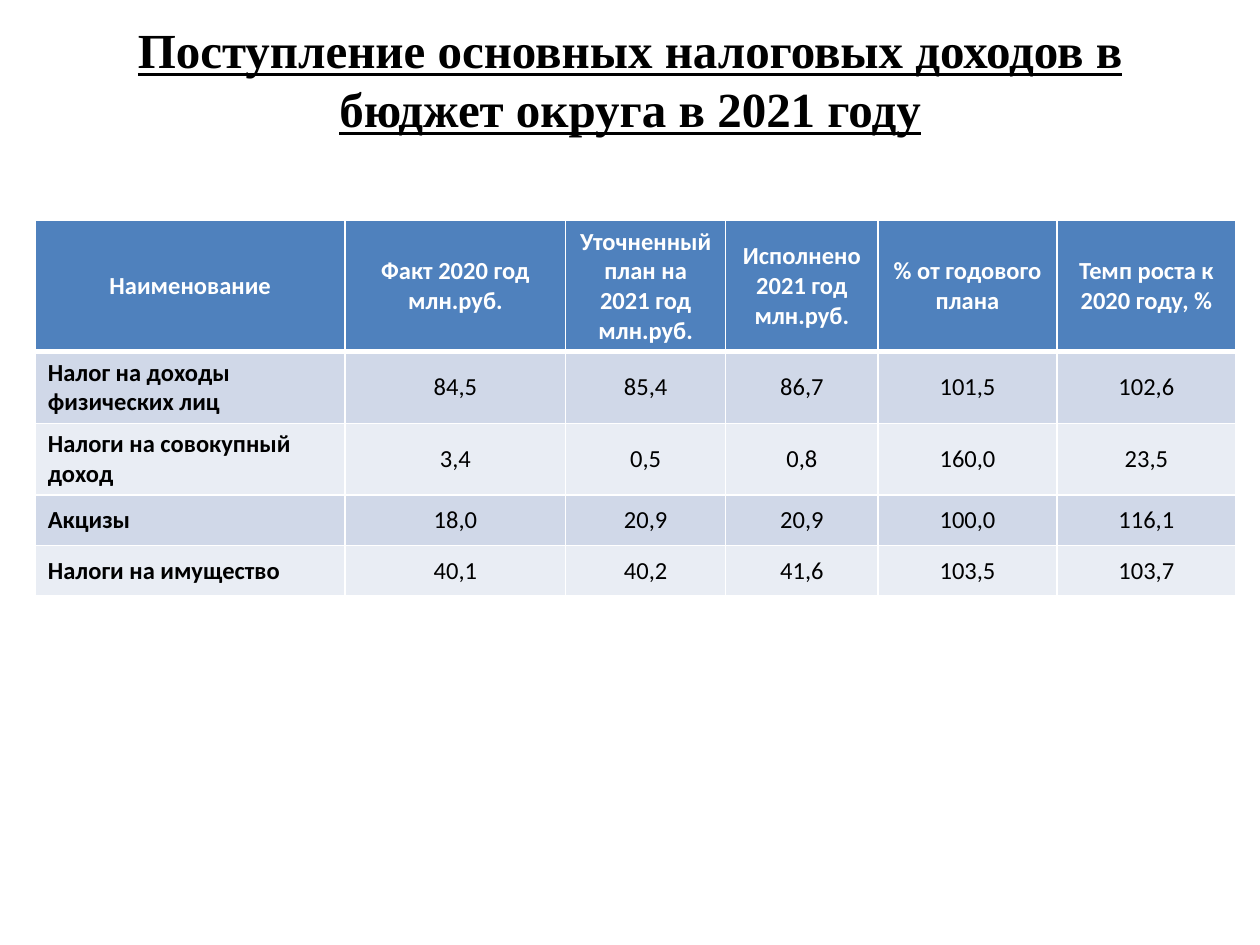
from lxml import etree
from pptx import Presentation
from pptx.dml.color import RGBColor
from pptx.enum.text import MSO_ANCHOR, PP_ALIGN
from pptx.oxml.ns import qn
from pptx.util import Inches, Pt

MIDDLE = MSO_ANCHOR.MIDDLE
LEFT, CENTER = PP_ALIGN.LEFT, PP_ALIGN.CENTER
COLORS = {"head": "4F81BD", "odd": "D0D8E8", "even": "E9EDF4",
          "white": "FFFFFF", "black": "000000"}
WIDTHS = [2.46, 1.75, 1.27, 1.21, 1.42, 1.42]
HEIGHTS = [1.04, 0.57, 0.57, 0.4, 0.4]
ROWS = [
    ["Наименование", "Факт 2020 год млн.руб.", "Уточненный план на 2021 год млн.руб.",
     "Исполнено 2021 год млн.руб.", "% от годового плана", "Темп роста к 2020 году, %"],
    ["Налог на доходы физических лиц", "84,5", "85,4", "86,7", "101,5", "102,6"],
    ["Налоги на совокупный доход", "3,4", "0,5", "0,8", "160,0", "23,5"],
    ["Акцизы", "18,0", "20,9", "20,9", "100,0", "116,1"],
    ["Налоги на имущество", "40,1", "40,2", "41,6", "103,5", "103,7"],
]


def write(frame, text, font, size, color, bold, align):
    frame.text = text
    par = frame.paragraphs[0]
    par.alignment = align
    style = par.runs[0].font
    style.name, style.size, style.bold = font, Pt(size), bold
    style.color.rgb = RGBColor.from_string(COLORS[color])
    return style


def border(cell, top, bottom):
    """Draw white cell edges; top and bottom are widths in points."""
    props = cell._tc.get_or_add_tcPr()
    edges = [("a:lnL", 1), ("a:lnR", 1), ("a:lnT", top), ("a:lnB", bottom)]
    for i, (tag, width) in enumerate(edges):
        line = etree.Element(qn(tag), w=str(Pt(width)))
        fill = etree.SubElement(line, qn("a:solidFill"))
        etree.SubElement(fill, qn("a:srgbClr"), val=COLORS["white"])
        props.insert(i, line)


prs = Presentation()
prs.slide_width, prs.slide_height = Inches(10), Inches(7.5)
slide = prs.slides.add_slide(prs.slide_layouts[6])

title = slide.shapes.add_textbox(Inches(0.5), 0, Inches(9), Inches(1.25)).text_frame
title.word_wrap = True
title.vertical_anchor = MIDDLE
style = write(title, "Поступление основных налоговых доходов в бюджет округа в 2021 году",
              "Times New Roman", 28, "black", True, CENTER)
style.underline = True

table = slide.shapes.add_table(len(ROWS), len(WIDTHS), Inches(0.28), Inches(1.75),
                               Inches(sum(WIDTHS)), Inches(sum(HEIGHTS))).table
for col, width in zip(table.columns, WIDTHS):
    col.width = Inches(width)
for r, (row, height) in enumerate(zip(ROWS, HEIGHTS)):
    table.rows[r].height = Inches(height)
    head = r == 0
    band = "head" if head else "odd" if r % 2 else "even"
    for c, text in enumerate(row):
        cell = table.cell(r, c)
        cell.vertical_anchor = MIDDLE
        cell.fill.solid()
        cell.fill.fore_color.rgb = RGBColor.from_string(COLORS[band])
        border(cell, 3 if r == 1 else 1, 3 if head else 1)
        write(cell.text_frame, text, "Calibri", 14, "white" if head else "black",
              head or c == 0, CENTER if head or c else LEFT)

prs.save("out.pptx")
